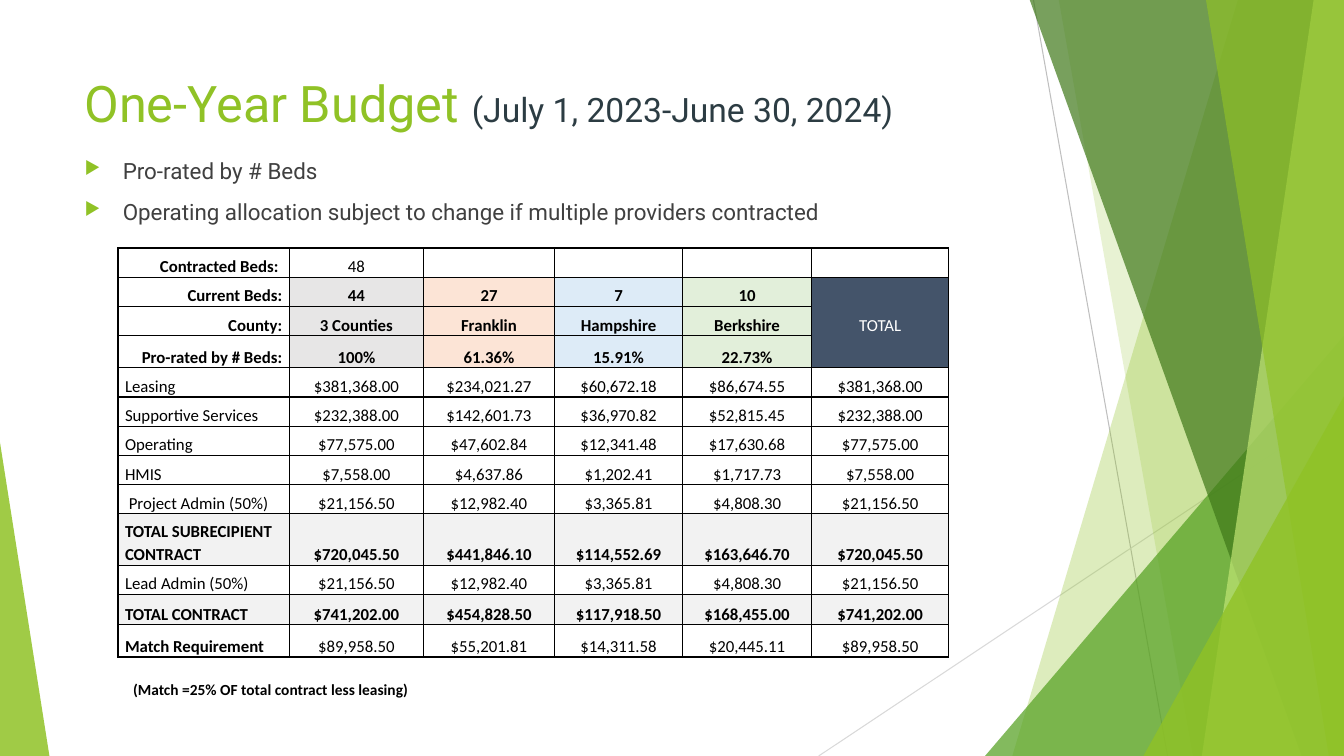
from dataclasses import dataclass

from lxml.etree import SubElement as Sub
from pptx import Presentation as Deck
from pptx.dml.color import RGBColor as Rgb
from pptx.enum.shapes import MSO_CONNECTOR as Link, MSO_SHAPE as Kind
from pptx.enum.text import MSO_ANCHOR as Anchor, PP_ALIGN as Align
from pptx.oxml.ns import qn
from pptx.util import Inches, Pt

HUES = {
    "lime": "90C226", "green": "54A021", "forest": "3F7819", "pale": "C0E474",
    "slate": "2C3C43", "text": "404040", "black": "000000", "white": "FFFFFF",
    "silver": "BFBFBF", "mist": "D9D9D9", "gray": "E7E6E6", "peach": "FCE4D6",
    "sky": "DDEBF7", "mint": "E2EFDA", "navy": "44546A", "light": "F2F2F2",
}
WIDE, TALL, TOP = 13.33, 7.5, -0.01


@dataclass(frozen=True)
class Ray:
    start: tuple[float, float]
    end: tuple[float, float]
    hue: str


@dataclass(frozen=True)
class Band:
    top: float
    foot: float
    hue: str
    alpha: int


@dataclass(frozen=True)
class Wedge:
    left: float
    top: float
    width: float
    tip: float
    hue: str
    alpha: int


@dataclass(frozen=True)
class Row:
    height: float
    cells: tuple[str, ...]
    style: str = "plain"


RAYS = [
    Ray((10.25, 0), (11.58, TALL), "silver"),
    Ray((WIDE, 4.03), (8.12, TALL), "mist"),
]
FACETS = [
    Band(12.28, 10.04, "lime", 30),
    Band(10.5, 11.83, "lime", 20),
    Wedge(9.77, 3.33, 3.56, 1, "green", 72),
    Band(10.21, 12.91, "forest", 70),
    Band(13.03, 11.92, "pale", 70),
    Band(11.96, 13.18, "lime", 65),
    Wedge(11.34, 3.93, 1.99, 1, "lime", 80),
    Wedge(0, 4.39, 0.49, 0, "lime", 85),
]
POINTS = [
    "Pro-rated by # Beds",
    "Operating allocation subject to change if multiple providers contracted",
]
COLS = [1.7, 1.33, 1.3, 1.27, 1.28, 1.36]
HEADS = ["", "gray", "peach", "sky", "mint", "navy"]
ROWS = [
    Row(0.29, ("Contracted Beds: ", "48", "", "", "", ""), "beds"),
    Row(0.29, ("Current Beds:", "44", "27", "7", "10", ""), "head"),
    Row(0.29, ("County:", "3 Counties", "Franklin", "Hampshire", "Berkshire", "TOTAL"), "head"),
    Row(0.32, ("Pro-rated by # Beds:", "100%", "61.36%", "15.91%", "22.73%", ""), "head"),
    Row(0.29, ("Leasing", "$381,368.00", "$234,021.27", "$60,672.18", "$86,674.55", "$381,368.00")),
    Row(0.29, ("Supportive Services", "$232,388.00", "$142,601.73", "$36,970.82", "$52,815.45",
               "$232,388.00")),
    Row(0.29, ("Operating", "$77,575.00", "$47,602.84", "$12,341.48", "$17,630.68", "$77,575.00")),
    Row(0.29, ("HMIS", "$7,558.00", "$4,637.86", "$1,202.41", "$1,717.73", "$7,558.00")),
    Row(0.29, (" Project Admin (50%)", "$21,156.50", "$12,982.40", "$3,365.81", "$4,808.30",
               "$21,156.50")),
    Row(0.51, ("TOTAL SUBRECIPIENT CONTRACT", "$720,045.50", "$441,846.10", "$114,552.69",
               "$163,646.70", "$720,045.50"), "total"),
    Row(0.29, ("Lead Admin (50%)", "$21,156.50", "$12,982.40", "$3,365.81", "$4,808.30",
               "$21,156.50")),
    Row(0.3, ("TOTAL CONTRACT", "$741,202.00", "$454,828.50", "$117,918.50", "$168,455.00",
              "$741,202.00"), "total"),
    Row(0.32, ("Match Requirement", "$89,958.50", "$55,201.81", "$14,311.58", "$20,445.11",
               "$89,958.50"), "match"),
    Row(0.42, ("(Match =25% OF total contract less leasing)", "", "", "", "", ""), "note"),
]


def tint(name: str) -> Rgb:
    return Rgb.from_string(HUES[name])


def draw_ray(shapes, ray: Ray) -> None:
    line = shapes.add_connector(Link.STRAIGHT, *map(Inches, ray.start + ray.end))
    line.line.color.rgb = tint(ray.hue)
    line.line.width = Pt(0.75)
    Sub(line._element.spPr, qn("a:effectLst"))


def draw_facet(shapes, facet: Band | Wedge) -> None:
    if isinstance(facet, Band):
        pen = shapes.build_freeform(Inches(facet.top), Inches(TOP))
        ends = [(WIDE, TOP), (WIDE, TALL), (facet.foot, TALL)]
        pen.add_line_segments([(Inches(x), Inches(y)) for x, y in ends])
        shape = pen.convert_to_shape()
    else:
        box = (facet.left, facet.top, facet.width, TALL - facet.top)
        shape = shapes.add_shape(Kind.ISOSCELES_TRIANGLE, *map(Inches, box))
        shape.adjustments[0] = facet.tip
    shape.shadow.inherit = False
    shape.line.fill.background()
    shape.fill.solid()
    shape.fill.fore_color.rgb = tint(facet.hue)
    shade = shape._element.spPr.find(qn("a:solidFill"))[0]
    Sub(shade, qn("a:alpha"), val=str(facet.alpha * 1000))


def add_frame(shapes, *box: float):
    frame = shapes.add_textbox(*map(Inches, box)).text_frame
    frame.word_wrap = True
    return frame


def draw_title(shapes) -> None:
    para = add_frame(shapes, 0.74, 0.67, 9.4, 0.8).paragraphs[0]
    para.font.name = "Roboto"
    for text, size, hue in [("One-Year Budget ", 36, "lime"),
                            ("(July 1, 2023-June 30, 2024)", 24, "slate")]:
        run = para.add_run()
        run.text = text
        run.font.size = Pt(size)
        run.font.color.rgb = tint(hue)


def draw_points(shapes) -> None:
    frame = add_frame(shapes, 0.74, 1.51, 9.9, 0.85)
    for num, text in enumerate(POINTS):
        para = frame.add_paragraph() if num else frame.paragraphs[0]
        para.text = text
        para.space_before = Pt(10)
        props = para._p.get_or_add_pPr()
        props.set("marL", str(Inches(0.38)))
        props.set("indent", str(-Inches(0.38)))
        Sub(Sub(props, qn("a:buClr")), qn("a:srgbClr"), val=HUES["lime"])
        Sub(props, qn("a:buSzPct"), val="80000")
        Sub(props, qn("a:buChar"), char="▶")
        para.font.name = "Roboto"
        para.font.size = Pt(16)
        para.font.color.rgb = tint("text")


def set_edges(cell, sides: str) -> None:
    props = cell._tc.get_or_add_tcPr()
    for side in "LRTB":
        edge = Sub(props, qn(f"a:ln{side}"), w=str(Pt(1)))
        if side in sides:
            Sub(Sub(edge, qn("a:solidFill")), qn("a:srgbClr"), val=HUES["black"])
        else:
            Sub(edge, qn("a:noFill"))


def fill_cell(cell, row: Row, r: int, c: int) -> None:
    navy = row.style == "head" and c == 5
    sides = "LRTB"
    if navy:
        sides = "LR" + {1: "T", 3: "B"}.get(r, "")
    elif row.style == "note":
        sides = "T"
    set_edges(cell, sides)
    hue = {"head": HEADS[c], "total": "light"}.get(row.style, "")
    if hue:
        cell.fill.solid()
        cell.fill.fore_color.rgb = tint(hue)
    else:
        cell.fill.background()
    cell.vertical_anchor = Anchor.BOTTOM
    cell.margin_left = cell.margin_right = Inches(0.07)
    cell.margin_top = cell.margin_bottom = 0
    para = cell.text_frame.paragraphs[0]
    para.text = row.cells[c]
    para.line_spacing = 1.15
    para.alignment = Align.CENTER
    if c == 0 and row.style != "note":
        para.alignment = Align.RIGHT if row.style in ("beds", "head") else Align.LEFT
    font = para.font
    font.name = "Calibri"
    font.size = Pt(11 if row.style == "note" else 12)
    font.bold = not navy and (row.style in ("head", "total") or c == 0 and row.style != "plain")
    font.color.rgb = tint("white" if navy else "black")


def draw_table(shapes) -> None:
    box = (1.17, 2.46, sum(COLS), sum(row.height for row in ROWS))
    table = shapes.add_table(len(ROWS), len(COLS), *map(Inches, box)).table
    table.first_row = table.horz_banding = False
    for c, width in enumerate(COLS):
        table.columns[c].width = Inches(width)
    for r, row in enumerate(ROWS):
        table.rows[r].height = Inches(row.height)
        for c in range(len(COLS)):
            fill_cell(table.cell(r, c), row, r, c)
    last = len(ROWS) - 1
    table.cell(last, 0).merge(table.cell(last, 1))


def main() -> None:
    deck = Deck()
    deck.slide_width, deck.slide_height = Inches(WIDE), Inches(TALL)
    shapes = deck.slides.add_slide(deck.slide_layouts[6]).shapes
    for ray in RAYS:
        draw_ray(shapes, ray)
    for facet in FACETS:
        draw_facet(shapes, facet)
    draw_title(shapes)
    draw_points(shapes)
    draw_table(shapes)
    deck.save("out.pptx")


if __name__ == "__main__":
    main()
